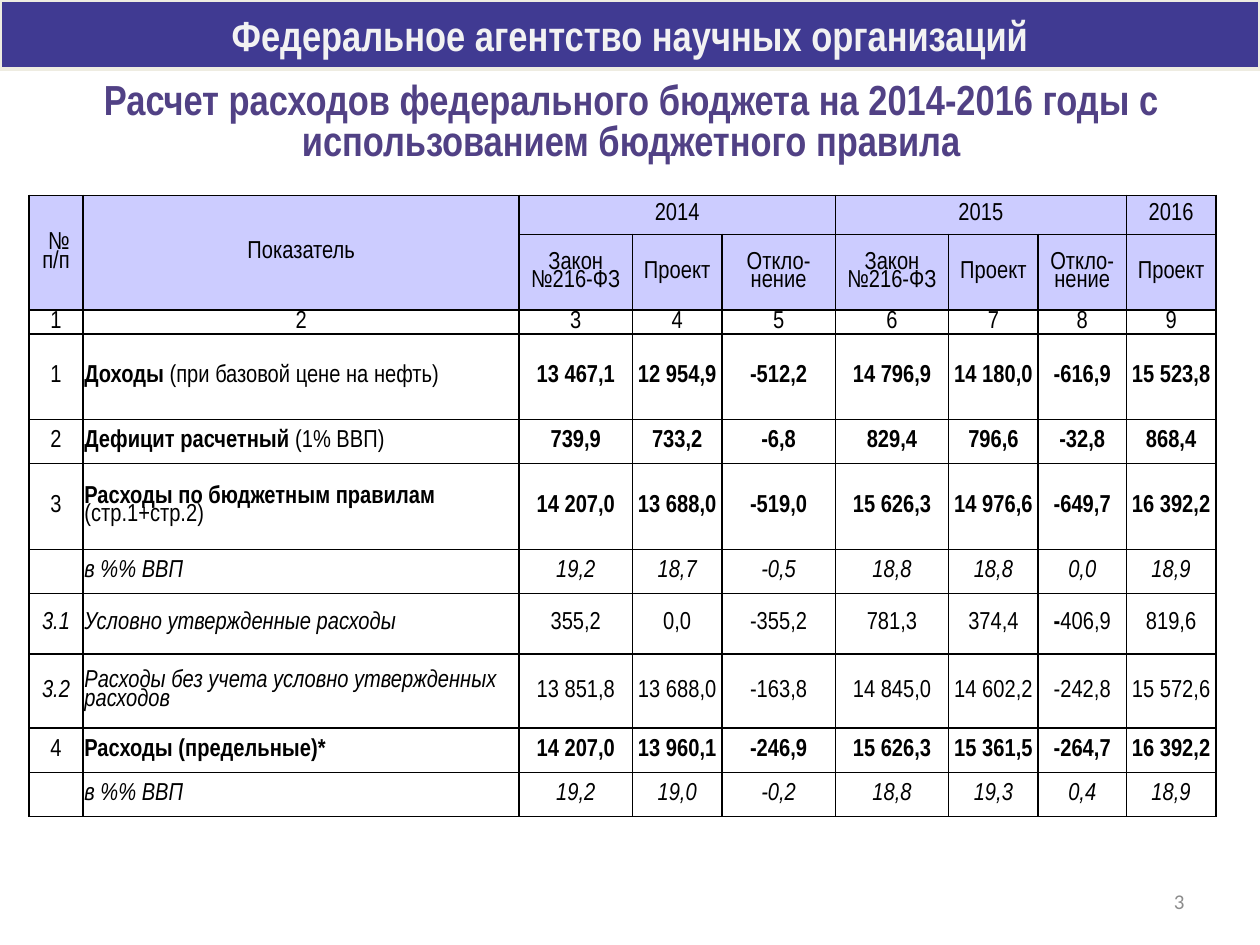
from dataclasses import dataclass

from lxml import etree
from pptx import Presentation, util as u
from pptx.dml.color import RGBColor
from pptx.enum import shapes, text
from pptx.oxml.ns import qn


@dataclass(frozen=True)
class Theme:
    face: str = "Arial Narrow"
    foot: str = "Calibri"
    navy: str = "403A92"
    cream: str = "EEECE1"
    pale: str = "F2F2F2"
    title: str = "514185"
    head: str = "CCCCFF"
    ink: str = "000000"
    gray: str = "8C8C8C"
    big: int = 24
    body: int = 14
    small: int = 12
    tight: float = 0.8


MID = text.PP_ALIGN.CENTER
LEFT = text.PP_ALIGN.LEFT
RIGHT = text.PP_ALIGN.RIGHT

COLS = [0.43, 3.46, 0.9, 0.71, 0.9, 0.9, 0.71, 0.7, 0.71]
TOP = ["\u00a0№ п/п".replace("\u00a0", " "), "Показатель", "2014", "", "", "2015", "", "", "2016"]
TRIO = ["Закон\n№216-ФЗ", "Проект", "Откло-нение"]
SUB = ["", ""] + TRIO * 2 + ["Проект"]
SPANS = [(0, 0, 1, 0), (0, 1, 1, 1), (0, 2, 0, 4), (0, 5, 0, 7)]
HEADS = [(0.31, TOP), (0.6, SUB)]

# Height, number, label, label style, value style, values.
# Text before "|" is bold; styles are "b" and "i".
ROWS = [
    (0.19, "1", "2", "", "", "3;4;5;6;7;8;9"),
    (0.68, "1", "Доходы |(при базовой цене на нефть)", "", "b",
     "13 467,1;12 954,9;-512,2;14 796,9;14 180,0;-616,9;15 523,8"),
    (0.35, "2", "Дефицит расчетный |(1% ВВП)", "", "b",
     "739,9;733,2;-6,8;829,4;796,6;-32,8;868,4"),
    (0.68, "3", "Расходы по бюджетным правилам |(стр.1+стр.2)", "", "b",
     "14 207,0;13 688,0;-519,0;15 626,3;14 976,6;-649,7;16 392,2"),
    (0.35, "", "в %% ВВП", "i", "i", "19,2;18,7;-0,5;18,8;18,8;0,0;18,9"),
    (0.48, "3.1", "Условно утвержденные расходы", "i", "",
     "355,2;0,0;-355,2;781,3;374,4;-|406,9;819,6"),
    (0.59, "3.2", "Расходы без учета условно утвержденных расходов", "i", "",
     "13 851,8;13 688,0;-163,8;14 845,0;14 602,2;-242,8;15 572,6"),
    (0.35, "4", "Расходы (предельные)*|", "", "b",
     "14 207,0;13 960,1;-246,9;15 626,3;15 361,5;-264,7;16 392,2"),
    (0.35, "", "в %% ВВП", "i", "i", "19,2;19,0;-0,2;18,8;19,3;0,4;18,9"),
]


class Deck:
    """Holds the theme and the current slide."""

    def __init__(self, theme):
        self.theme = theme
        self.prs = Presentation()
        self.prs.slide_width = u.Inches(10)
        self.prs.slide_height = u.Inches(7.5)
        self.slide = self.prs.slides.add_slide(self.prs.slide_layouts[5])

    def font(self, para, size, color, face=None, bold=False, italic=False):
        font = para.font
        font.name = face or self.theme.face
        font.size = u.Pt(size)
        font.color.rgb = RGBColor.from_string(color)
        font.bold = bold
        font.italic = italic

    def frame(self, shape, words, align, wrap=True):
        """Fill a shape with one paragraph and return it."""
        body = shape.text_frame
        body.word_wrap = wrap
        body.auto_size = text.MSO_AUTO_SIZE.NONE
        body.vertical_anchor = text.MSO_ANCHOR.MIDDLE
        para = body.paragraphs[0]
        para.text = words
        para.alignment = align
        return para

    def banner(self, words, box):
        look = self.theme
        bar = self.slide.shapes.add_shape(
            shapes.MSO_SHAPE.RECTANGLE, *map(u.Inches, box))
        bar.shadow.inherit = False
        bar.fill.solid()
        bar.fill.fore_color.rgb = RGBColor.from_string(look.navy)
        bar.line.color.rgb = RGBColor.from_string(look.cream)
        bar.line.width = u.Pt(2.25)
        para = self.frame(bar, words, MID, wrap=False)
        self.font(para, look.big, look.pale, bold=True)

    def title(self, words, box):
        look = self.theme
        shape = self.slide.shapes.title
        shape.left, shape.top, shape.width, shape.height = map(u.Inches, box)
        para = self.frame(shape, words, MID)
        para.line_spacing = look.tight
        self.font(para, look.big, look.title, bold=True)

    def number(self, words, box):
        look = self.theme
        shape = self.slide.shapes.add_textbox(*map(u.Inches, box))
        para = self.frame(shape, words, RIGHT)
        self.font(para, look.small, look.gray, look.foot)

    def border(self, cell):
        props = cell._tc.get_or_add_tcPr()
        for side in ("lnL", "lnR", "lnT", "lnB"):
            line = etree.SubElement(props, qn("a:" + side), w=str(u.Pt(1)))
            fill = etree.SubElement(line, qn("a:solidFill"))
            etree.SubElement(fill, qn("a:srgbClr"), val=self.theme.ink)

    def cell(self, cell, words, align=MID, style="", fill=None):
        """Write a cell; the part of words before "|" is bold."""
        look = self.theme
        self.border(cell)
        if fill:
            cell.fill.solid()
            cell.fill.fore_color.rgb = RGBColor.from_string(fill)
        else:
            cell.fill.background()
        cell.vertical_anchor = text.MSO_ANCHOR.MIDDLE
        cell.margin_left = cell.margin_right = u.Inches(0.01)
        cell.margin_top, cell.margin_bottom = u.Inches(0.01), 0
        para = cell.text_frame.paragraphs[0]
        para.alignment = align
        para.line_spacing = look.tight
        self.font(para, look.body, look.ink,
                  bold="b" in style, italic="i" in style)
        lead, bar, rest = words.partition("|")
        if not bar:
            para.text = words
            return
        run = para.add_run()
        run.text = lead
        run.font.bold = True
        if rest:
            para.add_run().text = rest

    def table(self, left, top):
        highs = [row[0] for row in HEADS + ROWS]
        box = (left, top, sum(COLS), sum(highs))
        grid = self.slide.shapes.add_table(
            len(highs), len(COLS), *map(u.Inches, box)).table
        grid.first_row = grid.horz_banding = False
        for col, wide in zip(grid.columns, COLS):
            col.width = u.Inches(wide)
        for row, high in zip(grid.rows, highs):
            row.height = u.Inches(high)
        for r, (_, names) in enumerate(HEADS):
            for c, name in enumerate(names):
                self.cell(grid.cell(r, c), name, fill=self.theme.head)
        for r, (_, num, label, tone, style, vals) in enumerate(ROWS, len(HEADS)):
            side = MID if r == len(HEADS) else LEFT
            self.cell(grid.cell(r, 0), num, style=tone)
            self.cell(grid.cell(r, 1), label, side, tone)
            for c, val in enumerate(vals.split(";"), 2):
                self.cell(grid.cell(r, c), val, style=style)
        for r, c, down, over in SPANS:
            grid.cell(r, c).merge(grid.cell(down, over))


def main():
    deck = Deck(Theme())
    deck.banner("Федеральное агентство научных организаций", (0, 0, 10, 0.55))
    deck.table(0.23, 1.55)
    deck.title("Расчет расходов федерального бюджета на 2014-2016 годы "
               "с использованием бюджетного правила", (0.23, 0.61, 9.56, 0.75))
    deck.number("3", (7.17, 6.95, 2.33, 0.4))
    deck.prs.save("out.pptx")


if __name__ == "__main__":
    main()
